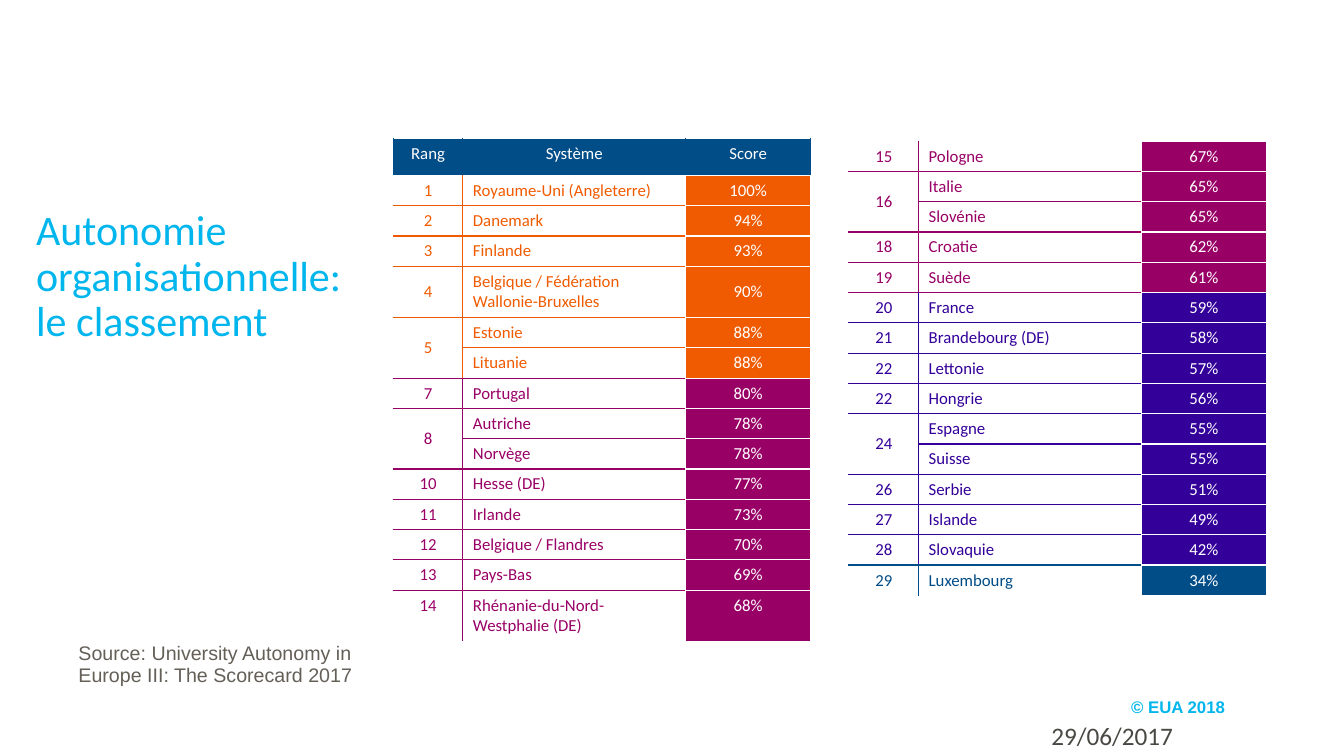
from dataclasses import dataclass

from lxml import etree
from pptx import Presentation
from pptx.dml.color import RGBColor
from pptx.enum.text import MSO_ANCHOR, PP_ALIGN
from pptx.oxml.ns import qn
from pptx.util import Inches, Pt

TOP, MIDDLE = MSO_ANCHOR.TOP, MSO_ANCHOR.MIDDLE
LEFT, CENTER = PP_ALIGN.LEFT, PP_ALIGN.CENTER


@dataclass(frozen=True)
class Theme:
    white: str = "FFFFFF"
    cyan: str = "00B6ED"
    navy: str = "004D88"
    orange: str = "F05B01"
    plum: str = "990066"
    indigo: str = "330099"
    grey: str = "645F57"
    dark: str = "494842"
    sans: str = "Calibri"
    plain: str = "Arial"
    title: int = 30
    date: int = 18
    source: int = 14
    small: int = 12


THEME = Theme()
HEADER = ("Rang", "Système", "Score")
COLUMNS = (5.18, 16.58, 9.3)
ROW, HEADER_ROW, TALL_ROW = 4, 4.93, 6.8
ONE_LINE = 25

LEADERS = [
    (THEME.orange, THEME.plum, [
        ("1", "Royaume-Uni (Angleterre)", "100%"),
        ("2", "Danemark", "94%"),
        ("3", "Finlande", "93%"),
        ("4", "Belgique / Fédération Wallonie-Bruxelles", "90%"),
        ("5", "Estonie", "88%"),
        (None, "Lituanie", "88%"),
    ]),
    (THEME.plum, THEME.white, [
        ("7", "Portugal", "80%"),
        ("8", "Autriche", "78%"),
        (None, "Norvège", "78%"),
        ("10", "Hesse (DE)", "77%"),
        ("11", "Irlande", "73%"),
        ("12", "Belgique / Flandres", "70%"),
        ("13", "Pays-Bas", "69%"),
        ("14", "Rhénanie-du-Nord-Westphalie (DE)", "68%"),
    ]),
]
FOLLOWERS = [
    (THEME.plum, THEME.plum, [
        ("15", "Pologne", "67%"),
        ("16", "Italie", "65%"),
        (None, "Slovénie", "65%"),
        ("18", "Croatie", "62%"),
        ("19", "Suède", "61%"),
    ]),
    (THEME.indigo, THEME.navy, [
        ("20", "France", "59%"),
        ("21", "Brandebourg (DE)", "58%"),
        ("22", "Lettonie", "57%"),
        ("22", "Hongrie", "56%"),
        ("24", "Espagne", "55%"),
        (None, "Suisse", "55%"),
        ("26", "Serbie", "51%"),
        ("27", "Islande", "49%"),
        ("28", "Slovaquie", "42%"),
    ]),
    (THEME.navy, THEME.white, [("29", "Luxembourg", "34%")]),
]


class Deck:
    def __init__(self, theme):
        self.theme = theme
        self.prs = Presentation()
        self.prs.slide_width, self.prs.slide_height = Inches(13.33), Inches(7.5)
        self.slide = self.prs.slides.add_slide(self.prs.slide_layouts[6])

    def x(self, percent):
        return round(self.prs.slide_width * percent / 100)

    def y(self, percent):
        return round(self.prs.slide_height * percent / 100)

    def box(self, left, top, width, height):
        return self.x(left), self.y(top), self.x(width), self.y(height)

    def put_text(self, tf, text, size, color, font, bold=False, align=LEFT):
        tf.text = text
        p = tf.paragraphs[0]
        p.alignment = align
        r = p.runs[0]
        r.font.size, r.font.name, r.font.bold = Pt(size), font, bold
        r.font.color.rgb = RGBColor.from_string(color)
        return p

    def text(self, place, text, size, color, font, bold=False, anchor=TOP, spacing=1.0):
        tf = self.slide.shapes.add_textbox(*self.box(*place)).text_frame
        tf.word_wrap = True
        tf.vertical_anchor = anchor
        self.put_text(tf, text, size, color, font, bold).line_spacing = spacing

    def borders(self, cell, left, right, top, bottom):
        tc_pr = cell._tc.get_or_add_tcPr()
        for side, color in zip("LRTB", (left, right, top, bottom)):
            ln = etree.SubElement(tc_pr, qn(f"a:ln{side}"), w=str(Pt(1)))
            fill = etree.SubElement(ln, qn("a:solidFill"))
            etree.SubElement(fill, qn("a:srgbClr"), val=color)

    def cell(self, cell, text, color, fill, edges, align=CENTER, anchor=MIDDLE):
        self.borders(cell, *edges)
        if fill:
            cell.fill.solid()
            cell.fill.fore_color.rgb = RGBColor.from_string(fill)
        else:
            cell.fill.background()
        cell.vertical_anchor = anchor
        if text:
            self.put_text(cell.text_frame, text, self.theme.small, color,
                          self.theme.sans, align=align)

    def ranking(self, left, top, bands, header=None, top_ranks=()):
        white = self.theme.white
        rows = [(color, closing if i == len(entries) - 1 else color, *entry)
                for color, closing, entries in bands
                for i, entry in enumerate(entries)]
        heights = [TALL_ROW if len(row[3]) > ONE_LINE else ROW for row in rows]
        first = 1 if header else 0
        if header:
            heights.insert(0, HEADER_ROW)
        place = self.box(left, top, sum(COLUMNS), sum(heights))
        table = self.slide.shapes.add_table(len(heights), len(COLUMNS), *place).table
        table.first_row = table.horz_banding = False
        for column, width in zip(table.columns, COLUMNS):
            column.width = self.x(width)
        for row, height in zip(table.rows, heights):
            row.height = self.y(height)
        for c, label in enumerate(header or ()):
            self.cell(table.cell(0, c), label, white, self.theme.navy,
                      (self.theme.navy, self.theme.navy, white, white), anchor=TOP)

        above = white
        for i, (color, below, rank, system, score) in enumerate(rows):
            n = i + first
            shared = i + 1 < len(rows) and rows[i + 1][2] is None
            rank_below = rows[i + 1][1] if shared else below
            anchor = TOP if rank in top_ranks else MIDDLE
            self.cell(table.cell(n, 0), rank, color, None,
                      (white, color, above, rank_below), anchor=anchor)
            self.cell(table.cell(n, 1), system, color, None,
                      (color, white, above, below), LEFT)
            self.cell(table.cell(n, 2), score, white, color, (white,) * 4, anchor=anchor)
            if rank is None:
                table.cell(n - 1, 0).merge(table.cell(n, 0))
            above = below


def main():
    t = THEME
    deck = Deck(t)
    deck.text((83.42, 90.8, 8.48, 5.33), "© EUA 2018", t.small, t.cyan, t.plain,
              bold=True, anchor=MIDDLE)
    deck.ranking(29.26, 18.27, LEADERS, HEADER, top_ranks=("14",))
    deck.ranking(63.17, 18.67, FOLLOWERS)
    deck.text((1.95, 27.07, 24.46, 44.27), "Autonomie organisationnelle: le classement",
              t.title, t.cyan, t.sans, spacing=0.9)
    deck.text((77.49, 94.67, 22.51, 5.33), "29/06/2017", t.date, t.dark, t.sans)
    deck.text((5.1, 84.53, 23.56, 12.13),
              "Source: University Autonomy in Europe III: The Scorecard 2017",
              t.source, t.grey, t.plain, spacing=0.9)
    deck.prs.save("out.pptx")


if __name__ == "__main__":
    main()
